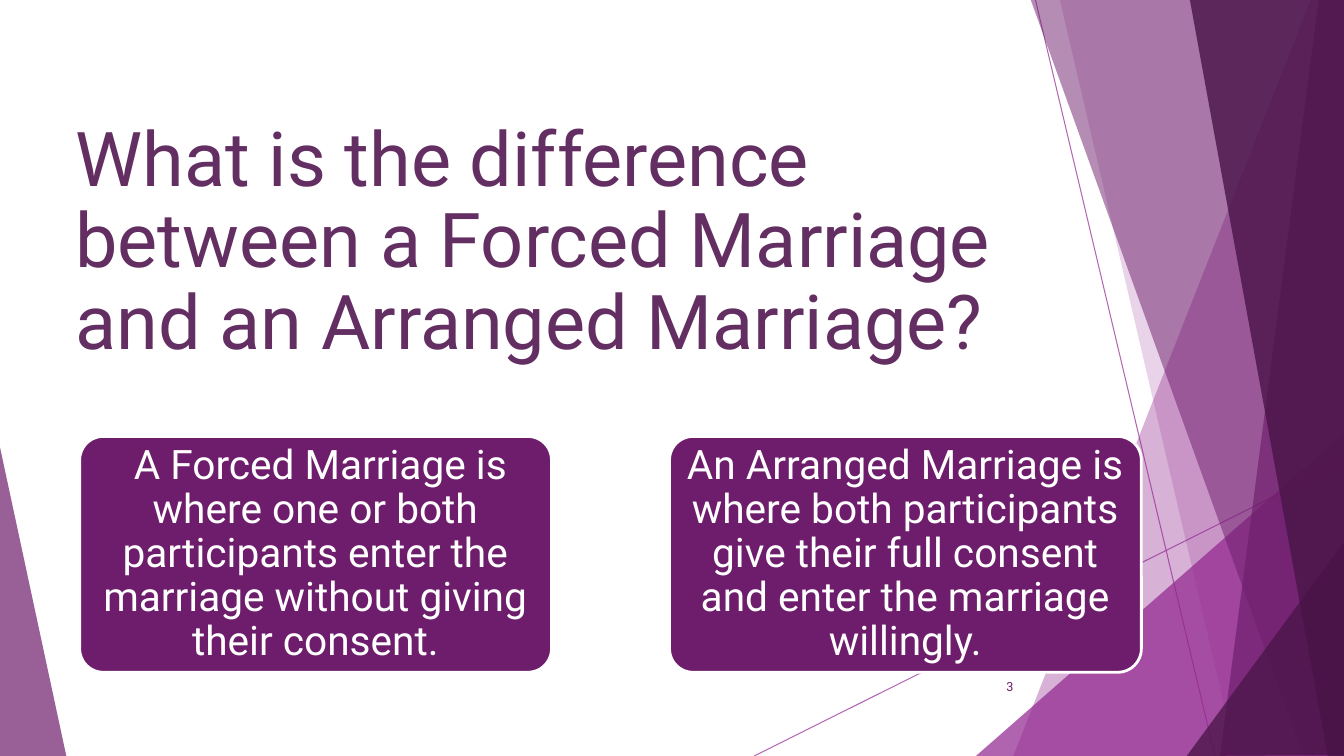
from dataclasses import dataclass

from lxml import etree
from pptx import Presentation
from pptx.dml.color import RGBColor
from pptx.enum.shapes import MSO_CONNECTOR, MSO_SHAPE
from pptx.enum.text import MSO_ANCHOR, PP_ALIGN
from pptx.oxml.ns import qn
from pptx.util import Inches, Pt

STRAIGHT = MSO_CONNECTOR.STRAIGHT
ROUNDED = MSO_SHAPE.ROUNDED_RECTANGLE
TOP, MIDDLE = MSO_ANCHOR.TOP, MSO_ANCHOR.MIDDLE
LEFT, CENTER, RIGHT = PP_ALIGN.LEFT, PP_ALIGN.CENTER, PP_ALIGN.RIGHT

ORCHID, PURPLE, PLUM = "92278F", "6D1D6B", "491447"
HEADING, WHITE = "632E62", "FFFFFF"
FONT = "Roboto"


@dataclass
class Ray:
    start: tuple[float, float]
    end: tuple[float, float]


@dataclass
class Facet:
    points: list[tuple[float, float]]
    color: str
    opacity: int


@dataclass
class TextStyle:
    size: float
    color: str
    align: PP_ALIGN
    anchor: MSO_ANCHOR
    spacing: float = 1.0
    inset_x: float = 0.1
    inset_y: float = 0.05


@dataclass
class Label:
    left: float
    top: float
    width: float
    height: float
    text: str
    style: TextStyle


@dataclass
class Card:
    left: float
    text: str


RAYS = [Ray((7.48, 7.5), (13.35, 4.57)), Ray((10.27, 0), (12.05, 7.5))]

FACETS = [
    Facet([(13, 0), (10.05, 7.5), (13.36, 7.51), (13.35, 0.01)], ORCHID, 36),
    Facet([(10.51, -0.01), (12.26, 7.5), (13.35, 7.5), (13.35, -0.01)], ORCHID, 20),
    Facet([(9.68, 7.5), (13.34, 4.29), (13.34, 7.5)], ORCHID, 72),
    Facet([(10.22, -0.01), (12.93, 7.5), (13.35, 7.49), (13.35, -0.01)], PURPLE, 50),
    Facet([(13.08, -0.01), (12.1, 7.5), (13.35, 7.5), (13.34, -0.01)], PURPLE, 66),
    Facet([(11.8, -0.01), (13.17, 7.5), (13.36, 7.5), (13.34, -0.01)], PLUM, 80),
    Facet([(11.77, 7.5), (13.35, 5.35), (13.36, 7.49)], PLUM, 76),
    Facet([(-0.01, 4.39), (0.66, 7.51), (-0.01, 7.5)], PURPLE, 70),
]

TITLE_STYLE = TextStyle(54, HEADING, LEFT, TOP, spacing=0.9)
NUMBER_STYLE = TextStyle(9, PURPLE, RIGHT, MIDDLE)
CARD_STYLE = TextStyle(29, WHITE, CENTER, MIDDLE, 0.9, 0.06, 0.04)

LABELS = [
    Label(0.65, 1.15, 10.05, 2.17,
          "What is the difference between a Forced Marriage and an Arranged Marriage?",
          TITLE_STYLE),
    Label(9.4, 6.61, 0.75, 0.4, "3", NUMBER_STYLE),
]

CARD_TOP, CARD_WIDTH, CARD_HEIGHT = 4.33, 4.68, 2.34
CARDS = [
    Card(0.79, " A Forced Marriage is where one or both participants enter "
               "the marriage without giving their consent."),
    Card(6.64, "An Arranged Marriage is where both participants give their "
               "full consent and enter the marriage willingly."),
]


def rgb(color: str) -> RGBColor:
    return RGBColor.from_string(color)


def apply(target, values: dict) -> None:
    for name, value in values.items():
        setattr(target, name, value)


def set_opacity(shape, percent: int) -> None:
    for color in shape.element.iter(qn("a:srgbClr")):
        etree.SubElement(color, qn("a:alpha"), val=str(percent * 1000))


def write(shape, text: str, style: TextStyle) -> None:
    frame = shape.text_frame
    apply(frame, {
        "word_wrap": True,
        "vertical_anchor": style.anchor,
        "margin_left": Inches(style.inset_x),
        "margin_right": Inches(style.inset_x),
        "margin_top": Inches(style.inset_y),
        "margin_bottom": Inches(style.inset_y),
    })
    para = frame.paragraphs[0]
    apply(para, {"alignment": style.align, "line_spacing": style.spacing})
    span = para.add_run()
    span.text = text
    apply(span.font, {"name": FONT, "size": Pt(style.size)})
    span.font.color.rgb = rgb(style.color)


def draw_ray(page, ray: Ray) -> None:
    line = page.shapes.add_connector(
        STRAIGHT, *(Inches(value) for value in ray.start + ray.end))
    line.line.color.rgb = rgb(ORCHID)
    line.line.width = Pt(0.75)
    set_opacity(line, 70)
    etree.SubElement(line.element.spPr, qn("a:effectLst"))


def draw_facet(page, facet: Facet) -> None:
    first, *others = [(Inches(x), Inches(y)) for x, y in facet.points]
    builder = page.shapes.build_freeform(*first)
    builder.add_line_segments(others, close=True)
    shape = builder.convert_to_shape()
    shape.shadow.inherit = False
    shape.line.fill.background()
    shape.fill.solid()
    shape.fill.fore_color.rgb = rgb(facet.color)
    set_opacity(shape, facet.opacity)


def draw_label(page, label: Label) -> None:
    box = page.shapes.add_textbox(Inches(label.left), Inches(label.top),
                                  Inches(label.width), Inches(label.height))
    write(box, label.text, label.style)


def draw_card(page, card: Card) -> None:
    shape = page.shapes.add_shape(ROUNDED, Inches(card.left), Inches(CARD_TOP),
                                  Inches(CARD_WIDTH), Inches(CARD_HEIGHT))
    shape.adjustments[0] = 0.1
    shape.shadow.inherit = False
    shape.fill.solid()
    shape.fill.fore_color.rgb = rgb(PURPLE)
    shape.line.color.rgb = rgb(WHITE)
    shape.line.width = Pt(2)
    write(shape, card.text, CARD_STYLE)


def main() -> None:
    deck = Presentation()
    apply(deck, {"slide_width": Inches(13.33), "slide_height": Inches(7.5)})
    page = deck.slides.add_slide(deck.slide_layouts[6])
    for draw, items in ((draw_ray, RAYS), (draw_facet, FACETS),
                        (draw_card, CARDS), (draw_label, LABELS)):
        for item in items:
            draw(page, item)
    deck.save("out.pptx")


if __name__ == "__main__":
    main()
